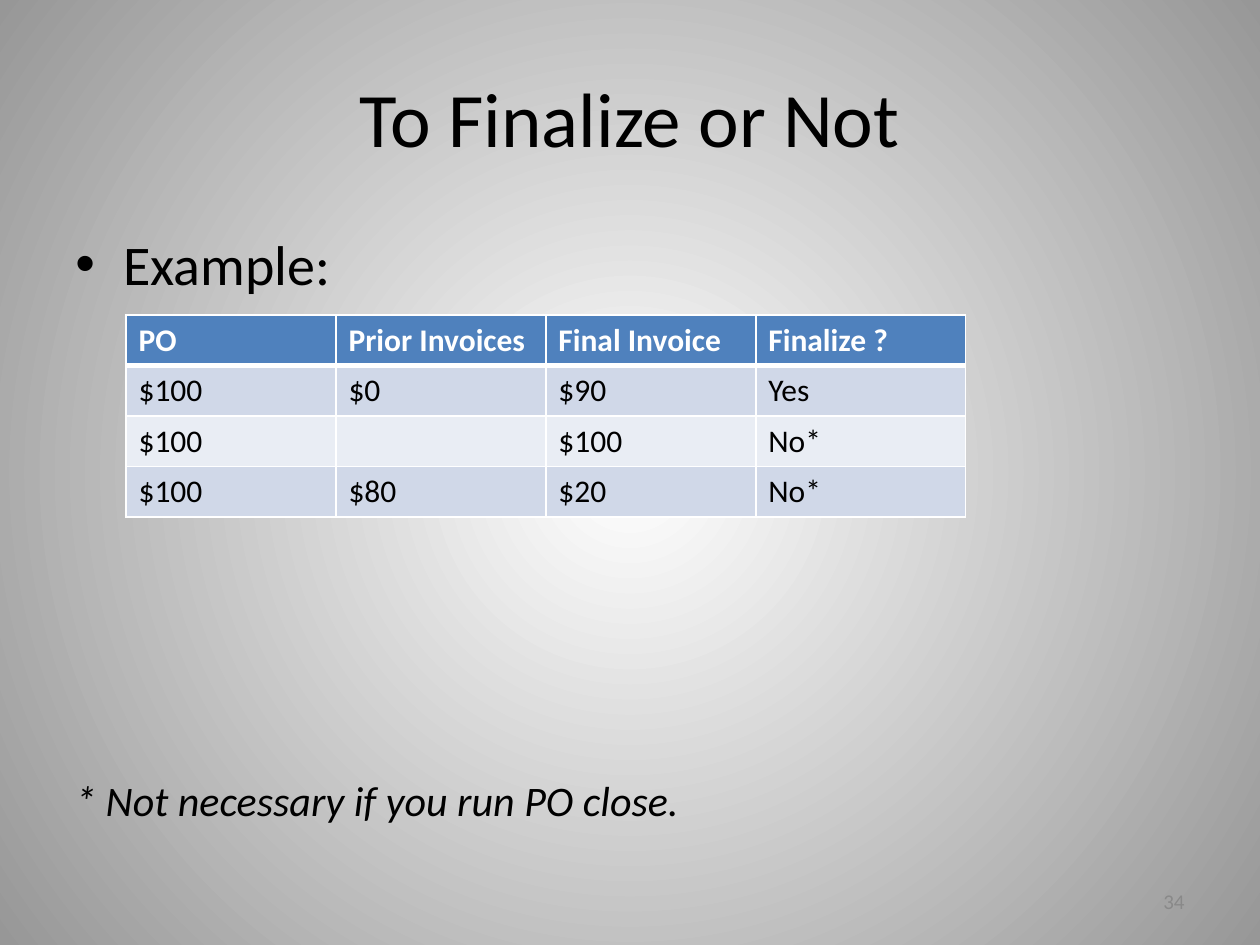
from dataclasses import dataclass

from lxml.etree import SubElement
from pptx import Presentation
from pptx.dml.color import RGBColor
from pptx.enum.text import MSO_ANCHOR, PP_ALIGN
from pptx.oxml.ns import qn
from pptx.util import Inches, Pt


@dataclass(frozen=True)
class Theme:
    font: str = "Calibri"
    ink: str = "000000"
    white: str = "FFFFFF"
    edge: str = "979797"
    number: str = "898989"
    header: str = "4F81BD"
    bands: tuple = ("D0D8E8", "E9EDF4")
    title_size: int = 44
    body_size: int = 32
    note_size: int = 24
    table_size: int = 18
    number_size: int = 12


class SlideBuilder:
    """Places elements on a grid of 20 columns and 30 rows."""

    COLUMNS, ROWS = 20, 30

    def __init__(self, presentation, theme):
        self.theme = theme
        self.column = presentation.slide_width / self.COLUMNS
        self.row = presentation.slide_height / self.ROWS
        self.slide = presentation.slides.add_slide(presentation.slide_layouts[5])

    def box(self, left, top, width, height):
        return (round(left * self.column), round(top * self.row),
                round(width * self.column), round(height * self.row))

    def add_text_run(self, paragraph, text, size, color, **formats):
        run = paragraph.add_run()
        run.text = text
        run.font.color.rgb = RGBColor.from_string(color)
        values = {"name": self.theme.font, "size": Pt(size), **formats}
        for name, value in values.items():
            setattr(run.font, name, value)

    def background(self):
        fill = self.slide.background.fill
        fill.gradient()
        colors = (self.theme.white, self.theme.edge)
        for position, (stop, color) in enumerate(zip(fill.gradient_stops, colors)):
            stop.color.rgb = RGBColor.from_string(color)
            stop.position = position
        # Radial shading from the middle of the slide
        gradient = self.slide.element.find(".//" + qn("a:gradFill"))
        gradient.remove(gradient.find(qn("a:lin")))
        circle = SubElement(gradient, qn("a:path"), {"path": "circle"})
        SubElement(circle, qn("a:fillToRect"),
                   {side: "50000" for side in ("l", "t", "r", "b")})

    def title(self, text, *place):
        shape = self.slide.shapes.title
        shape.left, shape.top, shape.width, shape.height = self.box(*place)
        shape.text_frame.vertical_anchor = MSO_ANCHOR.MIDDLE
        paragraph = shape.text_frame.paragraphs[0]
        paragraph.alignment = PP_ALIGN.CENTER
        self.add_text_run(paragraph, text, self.theme.title_size, self.theme.ink)

    def text(self, text, place, size, color, align=PP_ALIGN.LEFT,
             anchor=MSO_ANCHOR.TOP, bullet=None, **formats):
        frame = self.slide.shapes.add_textbox(*self.box(*place)).text_frame
        frame.word_wrap = True
        frame.vertical_anchor = anchor
        paragraph = frame.paragraphs[0]
        paragraph.alignment = align
        if bullet:
            properties = paragraph._p.get_or_add_pPr()
            indent = Inches(0.38)
            properties.set("marL", str(indent))
            properties.set("indent", str(-indent))
            SubElement(properties, qn("a:buFont"), typeface="Arial")
            SubElement(properties, qn("a:buChar"), char=bullet)
        self.add_text_run(paragraph, text, size, color, **formats)

    def border(self, cell, widths):
        properties = cell._tc.get_or_add_tcPr()
        for side, width in widths.items():
            line = SubElement(properties, qn("a:ln" + side), w=str(Pt(width)))
            fill = SubElement(line, qn("a:solidFill"))
            SubElement(fill, qn("a:srgbClr"), val=self.theme.white)

    def table(self, rows, *place):
        theme = self.theme
        frame = self.slide.shapes.add_table(len(rows), len(rows[0]), *self.box(*place))
        table = frame.table
        table.horz_banding = False
        for row, texts in enumerate(rows):
            is_header = row == 0
            fill = theme.header if is_header else theme.bands[(row - 1) % 2]
            color = theme.white if is_header else theme.ink
            widths = {"L": 1, "R": 1, "T": 3 if row == 1 else 1,
                      "B": 3 if is_header else 1}
            for column, text in enumerate(texts):
                cell = table.cell(row, column)
                self.border(cell, widths)
                cell.fill.solid()
                cell.fill.fore_color.rgb = RGBColor.from_string(fill)
                if text:
                    self.add_text_run(cell.text_frame.paragraphs[0], text,
                                      theme.table_size, color, bold=is_header)


def main():
    presentation = Presentation()
    presentation.slide_width, presentation.slide_height = Inches(10), Inches(7.5)
    theme = Theme()
    builder = SlideBuilder(presentation, theme)

    # Background and title
    builder.background()
    builder.title("To Finalize or Not", 1, 1.2, 18, 5)

    # Example with its table
    builder.text("Example:", (1, 7.08, 18, 2.6), theme.body_size, theme.ink, bullet="•")
    builder.table([
        ("PO", "Prior Invoices", "Final Invoice", "Finalize ?"),
        ("$100", "$0", "$90", "Yes"),
        ("$100", "", "$100", "No*"),
        ("$100", "$80", "$20", "No*"),
    ], 2, 10, 13.33, 6.4)

    # Footnote and slide number
    builder.text("* Not necessary if you run PO close.", (1, 24.4, 18, 2),
                 theme.note_size, theme.ink, italic=True)
    builder.text("34", (14.33, 27.8, 4.67, 1.6), theme.number_size, theme.number,
                 align=PP_ALIGN.RIGHT, anchor=MSO_ANCHOR.MIDDLE)

    presentation.save("out.pptx")


if __name__ == "__main__":
    main()
